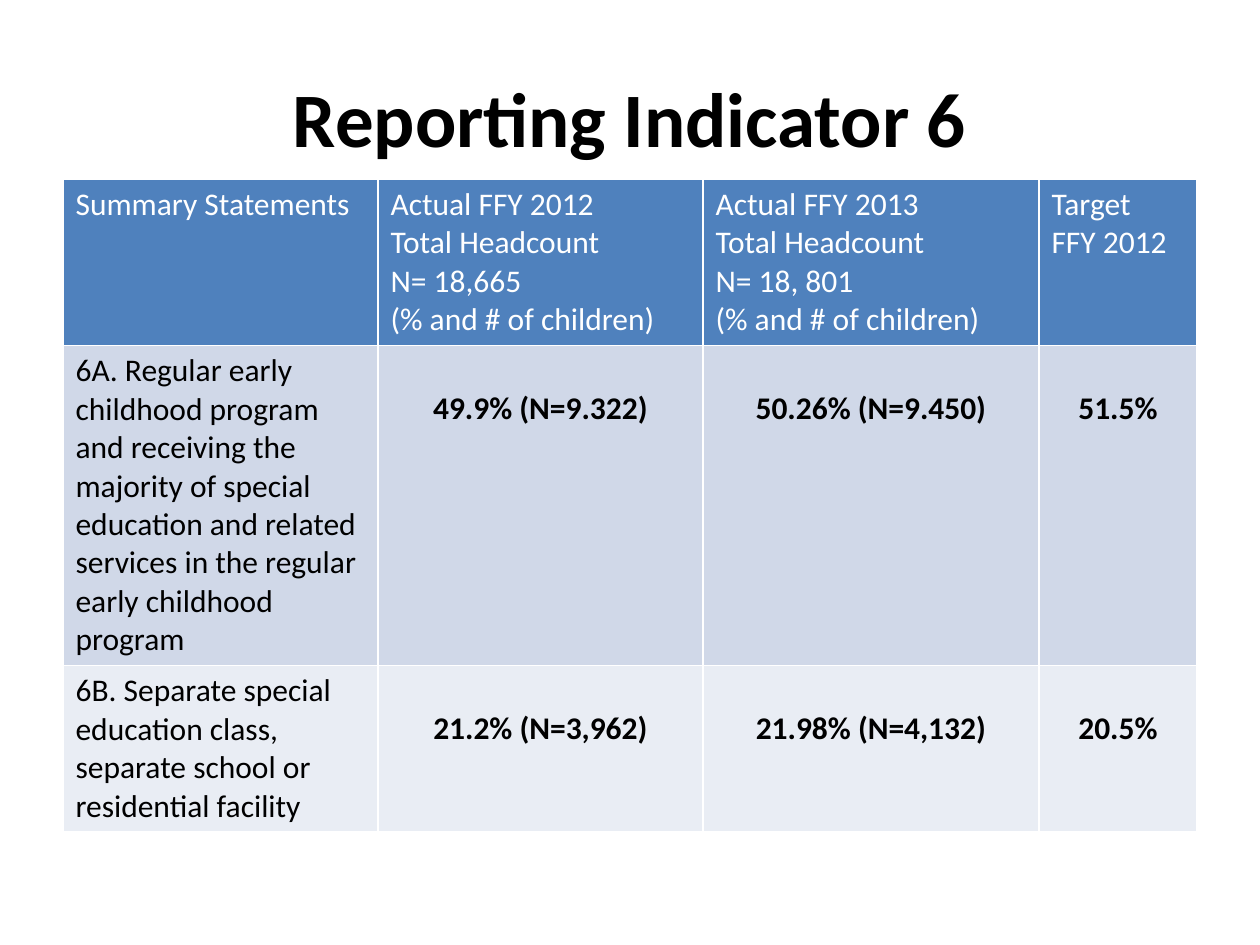
from pptx import Presentation
from pptx.dml.color import RGBColor
from pptx.enum.text import MSO_ANCHOR, PP_ALIGN
from pptx.util import Emu, Pt

TITLE = "Reporting Indicator 6"
ROWS = [
    ["Summary Statements",
     "Actual FFY 2012\nTotal Headcount\nN= 18,665\n(% and # of children)",
     "Actual FFY 2013\nTotal Headcount\nN= 18, 801\n(% and # of children)",
     "Target\nFFY 2012"],
    ["6A. Regular early childhood program and receiving the majority of special "
     "education and related services in the regular early childhood program",
     "49.9% (N=9.322)", "50.26% (N=9.450)", "51.5%"],
    ["6B. Separate special education class, separate school or residential facility",
     "21.2% (N=3,962)", "21.98% (N=4,132)", "20.5%"],
]
COL_WIDTHS = [315, 325, 336, 158]
ROW_HEIGHTS = [164, 314, 164]
VALUE_TOP_MARGIN = 44  # drops the values to the second line of the statement
COLORS = {"header": "4F81BD", "odd": "D0D8E8", "even": "E9EDF4",
          "white": "FFFFFF", "black": "000000"}
ROW_FILLS = ["header", "odd", "even"]
FONT = "Calibri"


def px(n):
    return Emu(round(n * 914400 / 126))


def format_text(tf, size, color, bold, align):
    for p in tf.paragraphs:
        p.alignment = align
        for r in p.runs:
            r.font.name = FONT
            r.font.size = Pt(size)
            r.font.bold = bold
            r.font.color.rgb = RGBColor.from_string(COLORS[color])


def add_title(s):
    title = s.shapes.title
    title.left, title.top, title.width, title.height = map(px, (63, 38, 1134, 158))
    tf = title.text_frame
    tf.text = TITLE
    tf.vertical_anchor = MSO_ANCHOR.MIDDLE
    format_text(tf, 44, "black", True, PP_ALIGN.CENTER)


def add_indicator_table(s):
    table = s.shapes.add_table(
        len(ROWS), len(COL_WIDTHS), px(63), px(179),
        px(sum(COL_WIDTHS)), px(sum(ROW_HEIGHTS))).table
    for column, width in zip(table.columns, COL_WIDTHS):
        column.width = px(width)
    for i, texts in enumerate(ROWS):
        table.rows[i].height = px(ROW_HEIGHTS[i])
        for j, text in enumerate(texts):
            cell = table.cell(i, j)
            cell.fill.solid()
            cell.fill.fore_color.rgb = RGBColor.from_string(COLORS[ROW_FILLS[i]])
            cell.text_frame.text = text
            is_value = i > 0 and j > 0
            if is_value:
                cell.margin_top = px(VALUE_TOP_MARGIN)
            format_text(cell.text_frame, 18, "black" if i else "white", is_value,
                        PP_ALIGN.CENTER if is_value else PP_ALIGN.LEFT)


def main():
    prs = Presentation()
    prs.slide_width, prs.slide_height = px(1260), px(945)
    s = prs.slides.add_slide(prs.slide_layouts[5])
    add_title(s)
    add_indicator_table(s)
    prs.save("out.pptx")


if __name__ == "__main__":
    main()
